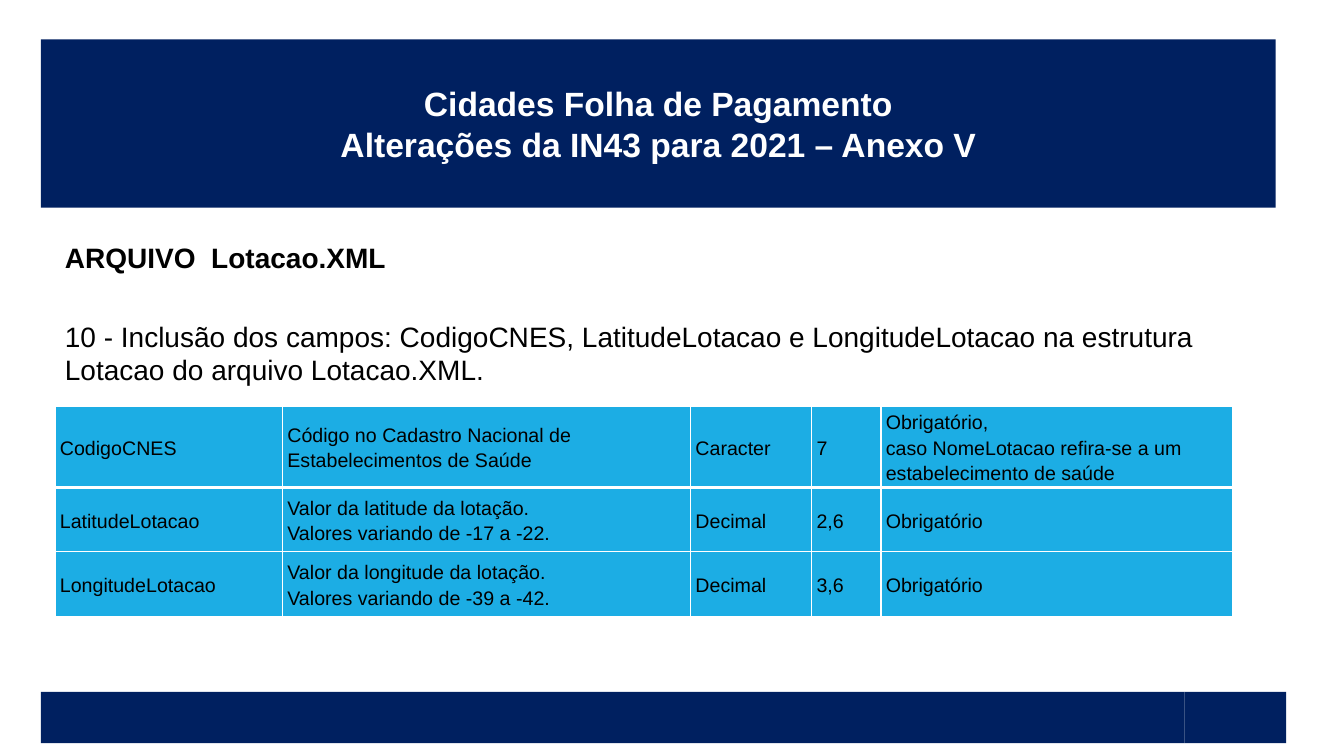
from dataclasses import dataclass, field

from lxml.etree import SubElement
from pptx import Presentation
from pptx.dml.color import RGBColor
from pptx.enum.shapes import MSO_SHAPE as Shape
from pptx.enum.text import MSO_ANCHOR as Anchor, PP_ALIGN as Align
from pptx.oxml.ns import qn
from pptx.util import Pt

FONT = "Arial"
NAVY, SKY, WHITE, BLACK = "002060", "1CADE4", "FFFFFF", "000000"


@dataclass
class Line:
    text: str
    size: float
    bold: bool = False
    color: str = BLACK
    align: Align = Align.LEFT
    space: float = 1.0
    before: float = 0


@dataclass
class Box:
    left: float
    top: float
    width: float
    height: float
    lines: list[Line] = field(default_factory=list)
    fill: str = NAVY
    inset: tuple[float, float] = (9.4, 5)


def rgb(code: str) -> RGBColor:
    return RGBColor.from_string(code)


def write(frame, lines: list[Line]) -> None:
    for i, line in enumerate(lines):
        para = frame.add_paragraph() if i else frame.paragraphs[0]
        para.text = line.text
        para.alignment = line.align
        para.line_spacing = line.space
        if i:
            para.space_before = Pt(line.before)
        font = para.font
        font.name, font.size, font.bold = FONT, Pt(line.size), line.bold
        font.color.rgb = rgb(line.color)


def draw(slide, box: Box) -> None:
    place = [Pt(n) for n in (box.left, box.top, box.width, box.height)]
    if box.fill:
        shape = slide.shapes.add_shape(Shape.RECTANGLE, *place)
        shape.shadow.inherit = False
        shape.fill.solid()
        shape.fill.fore_color.rgb = rgb(box.fill)
        shape.line.fill.background()
    else:
        shape = slide.shapes.add_textbox(*place)
    if not box.lines:
        return
    frame = shape.text_frame
    frame.word_wrap = True
    frame.vertical_anchor = Anchor.MIDDLE if box.fill else Anchor.TOP
    side, edge = box.inset
    frame.margin_left = frame.margin_right = Pt(side)
    frame.margin_top = frame.margin_bottom = Pt(edge)
    write(frame, box.lines)


def rule(cell, widths: dict[str, float]) -> None:
    props = cell._tc.get_or_add_tcPr()
    for side, width in widths.items():
        edge = SubElement(props, qn(f"a:ln{side}"), w=str(Pt(width)))
        fill = SubElement(edge, qn("a:solidFill"))
        SubElement(fill, qn("a:srgbClr"), val=WHITE)


def grid(slide, left: float, top: float, cols: list[float],
         high: float, rows: list[list[str]]) -> None:
    table = slide.shapes.add_table(
        len(rows), len(cols), Pt(left), Pt(top),
        Pt(sum(cols)), Pt(high * len(rows))).table
    table.first_row = table.horz_banding = False
    for col, width in zip(table.columns, cols):
        col.width = Pt(width)
    for r, row in enumerate(rows):
        table.rows[r].height = Pt(high)
        for c, text in enumerate(row):
            cell = table.cell(r, c)
            cell.margin_left = cell.margin_right = Pt(3.5)
            cell.margin_top = cell.margin_bottom = 0
            cell.vertical_anchor = Anchor.MIDDLE
            # A thick rule parts the first row from the rest
            rule(cell, {"L": 1, "R": 1, "T": 3 if r == 1 else 1,
                        "B": 3 if r == 0 else 1})
            cell.fill.solid()
            cell.fill.fore_color.rgb = rgb(SKY)
            write(cell.text_frame,
                  [Line(t, 14, space=1.15) for t in text.split("\n")])


BOXES = [
    # Title band
    Box(29.2, 28.1, 882, 120.2, [
        Line("Cidades Folha de Pagamento", 24, True, WHITE, Align.CENTER),
        Line("Alterações da IN43 para 2021 – Anexo V", 24, True, WHITE,
             Align.CENTER)]),
    # Footer bands
    Box(29.2, 494.2, 816.8, 36.7),
    Box(846, 494.2, 72.7, 36.7),
    # Body text
    Box(39.3, 156.2, 872, 161.3, [
        Line("ARQUIVO  Lotacao.XML", 20, True, space=1.5),
        Line("10 - Inclusão dos campos: CodigoCNES, LatitudeLotacao e "
             "LongitudeLotacao na estrutura Lotacao do arquivo "
             "Lotacao.XML.", 20, before=32.4)],
        fill="", inset=(7.2, 3.6)),
]

COLS = [162.5, 291.5, 86.5, 49.5, 251.5]
FIELDS = [
    ["CodigoCNES",
     "Código no Cadastro Nacional de Estabelecimentos de Saúde",
     "Caracter", "7",
     "Obrigatório,\ncaso NomeLotacao refira-se a um "
     "estabelecimento de saúde"],
    ["LatitudeLotacao",
     "Valor da latitude da lotação.\nValores variando de -17 a -22.",
     "Decimal", "2,6", "Obrigatório"],
    ["LongitudeLotacao",
     "Valor da longitude da lotação.\nValores variando de -39 a -42.",
     "Decimal", "3,6", "Obrigatório"],
]


def main() -> None:
    deck = Presentation()
    deck.slide_width, deck.slide_height = Pt(960), Pt(540)
    slide = deck.slides.add_slide(deck.slide_layouts[6])
    for box in BOXES:
        draw(slide, box)
    # Field table
    grid(slide, 39.3, 290.2, COLS, 46, FIELDS)
    deck.save("out.pptx")


if __name__ == "__main__":
    main()
